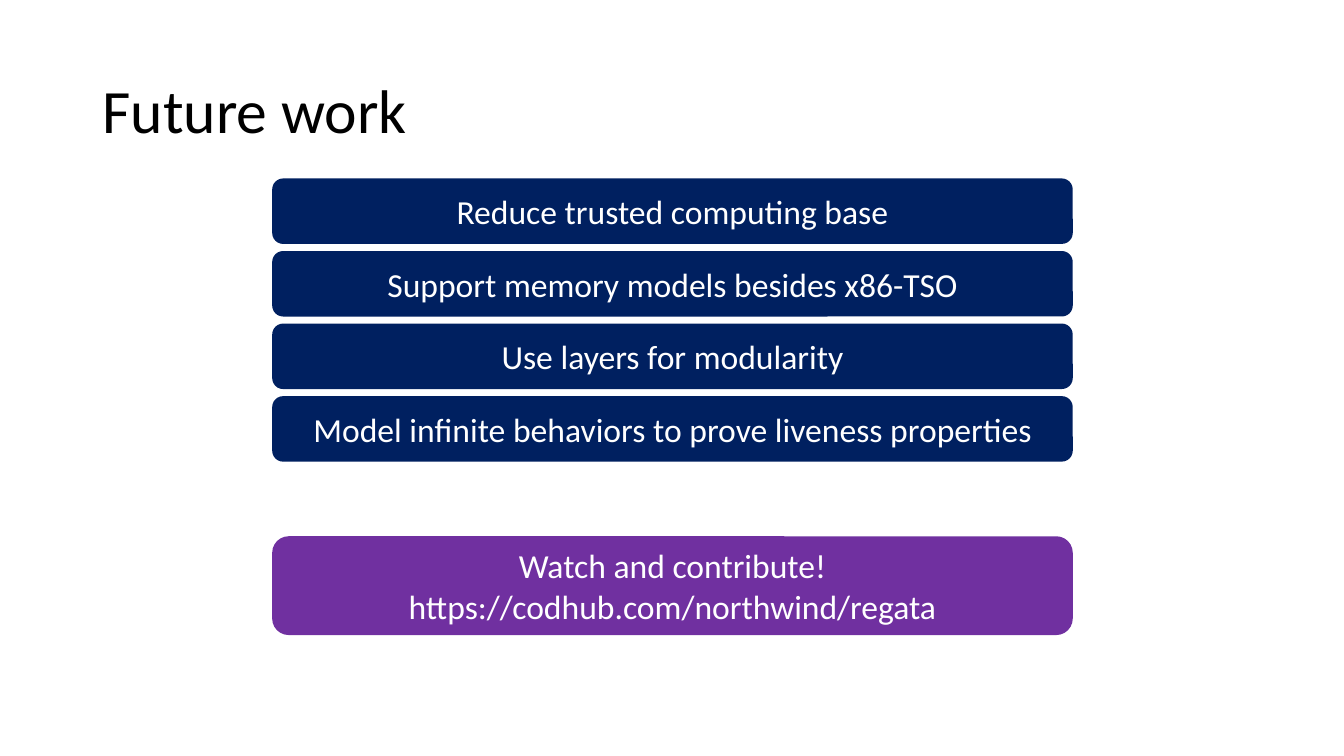
from dataclasses import dataclass

from pptx import Presentation
from pptx.dml.color import RGBColor
from pptx.enum.shapes import MSO_SHAPE
from pptx.enum.text import MSO_ANCHOR, PP_ALIGN
from pptx.util import Inches, Pt

ROUND = MSO_SHAPE.ROUNDED_RECTANGLE
MIDDLE = MSO_ANCHOR.MIDDLE
LEFT, CENTER = PP_ALIGN.LEFT, PP_ALIGN.CENTER


@dataclass(frozen=True)
class Theme:
    font: str = "Calibri"
    ink: str = "000000"
    light: str = "FFFFFF"
    navy: str = "002060"
    purple: str = "7030A0"
    title: int = 44
    body: int = 24


THEME = Theme()

GOALS = [
    "Reduce trusted computing base",
    "Support memory models besides x86-TSO",
    "Use layers for modularity",
    "Model infinite behaviors to prove liveness properties",
]
CALL = ["Watch and contribute!", "https://codhub.com/northwind/regata"]


def write(shape, *lines, size=THEME.body, color=THEME.light, align=CENTER, spacing=1.0):
    """Fill the shape with one paragraph, broken into the given lines."""
    frame = shape.text_frame
    frame.word_wrap = True
    frame.vertical_anchor = MIDDLE
    para = frame.paragraphs[0]
    para.alignment = align
    para.line_spacing = spacing
    for i, line in enumerate(lines):
        if i:
            para.add_line_break()
        run = para.add_run()
        run.text = line
        run.font.name = THEME.font
        run.font.size = Pt(size)
        run.font.color.rgb = RGBColor.from_string(color)


def add_title(slide, text, left, top, width, height):
    box = slide.shapes.add_textbox(
        Inches(left), Inches(top), Inches(width), Inches(height))
    write(box, text, size=THEME.title, color=THEME.ink, align=LEFT, spacing=0.9)


def add_bar(slide, lines, fill, left, top, width, height):
    bar = slide.shapes.add_shape(
        ROUND, Inches(left), Inches(top), Inches(width), Inches(height))
    bar.shadow.inherit = False
    bar.fill.solid()
    bar.fill.fore_color.rgb = RGBColor.from_string(fill)
    bar.line.fill.background()
    write(bar, *lines)


def add_goals(slide, goals, left, top, width, height, gap=0.07):
    """Stack one bar per goal, evenly spaced within the box."""
    tall = (height - gap * (len(goals) - 1)) / len(goals)
    for i, goal in enumerate(goals):
        add_bar(slide, [goal], THEME.navy, left, top + i * (tall + gap), width, tall)


def main():
    deck = Presentation()
    deck.slide_width, deck.slide_height = Inches(13.33), Inches(7.5)
    slide = deck.slides.add_slide(deck.slide_layouts[6])
    left, width = 2.7, 7.94
    add_title(slide, "Future work", 0.92, 0.4, 11.5, 1.45)
    add_goals(slide, GOALS, left, 1.77, width, 2.81)
    add_bar(slide, CALL, THEME.purple, left, 5.32, width, 0.98)
    deck.save("out.pptx")


if __name__ == "__main__":
    main()
